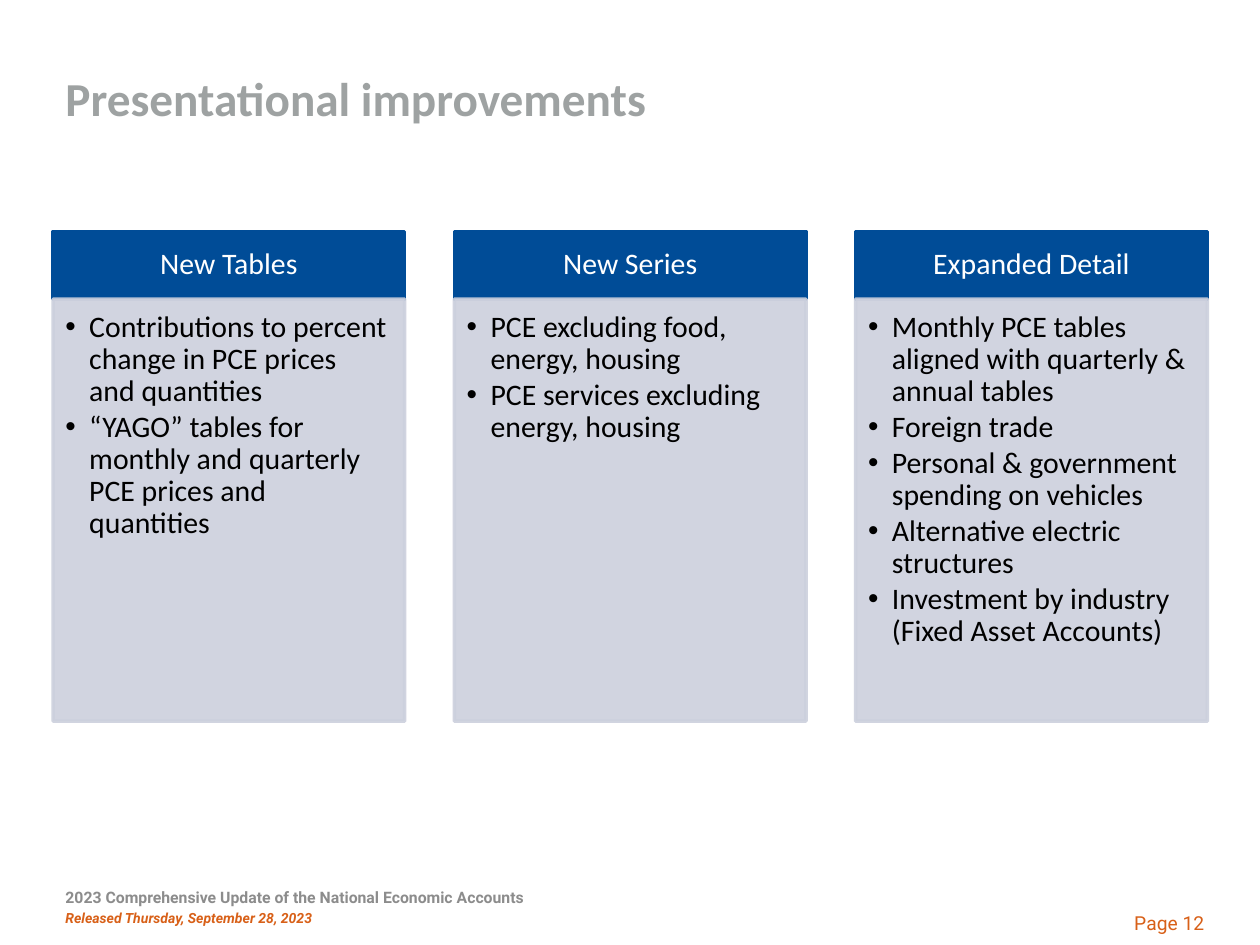
"""Build the slide on presentational improvements in the national accounts."""
from dataclasses import dataclass

from lxml import etree
from pptx import Presentation
from pptx.dml.color import RGBColor
from pptx.enum.shapes import MSO_SHAPE
from pptx.enum.text import MSO_ANCHOR, MSO_AUTO_SIZE, PP_ALIGN
from pptx.oxml.ns import qn
from pptx.util import Cm, Pt

RECTANGLE = MSO_SHAPE.RECTANGLE
TOP, MIDDLE = MSO_ANCHOR.TOP, MSO_ANCHOR.MIDDLE
LEFT, CENTER, RIGHT = PP_ALIGN.LEFT, PP_ALIGN.CENTER, PP_ALIGN.RIGHT
NO_AUTOFIT = MSO_AUTO_SIZE.NONE

BLUE = RGBColor(0x00, 0x4C, 0x97)
PALE = RGBColor(0xCC, 0xD0, 0xDD)
TITLE_GRAY = RGBColor(0x9E, 0xA2, 0xA2)
FOOTER_GRAY = RGBColor(0x8C, 0x8C, 0x8C)
ORANGE = RGBColor(0xD8, 0x60, 0x18)
WHITE = RGBColor(0xFF, 0xFF, 0xFF)
BLACK = RGBColor(0x00, 0x00, 0x00)

MARGIN = Cm(1.07)
COLUMN_WIDTH, COLUMN_PITCH = Cm(7.09), Cm(8.09)
HEADING_TOP, HEADING_HEIGHT = Cm(4.67), Cm(1.36)
PANEL_TOP, PANEL_HEIGHT = Cm(6.03), Cm(8.51)
BULLET_INDENT = Cm(0.48)


@dataclass(frozen=True)
class Style:
    font: str
    size: float
    color: RGBColor
    bold: bool = False
    italic: bool = False


@dataclass(frozen=True)
class Column:
    heading: str
    points: tuple[str, ...]


TITLE_STYLE = Style("Calibri", 27, TITLE_GRAY, bold=True)
HEADING_STYLE = Style("Calibri", 17, WHITE)
POINT_STYLE = Style("Calibri", 17, BLACK)
PAGE_STYLE = Style("Roboto", 11, ORANGE)

COLUMNS = (
    Column("New Tables", (
        "Contributions to percent change in PCE prices and quantities",
        "“YAGO” tables for monthly and quarterly PCE prices and quantities",
    )),
    Column("New Series", (
        "PCE excluding food, energy, housing",
        "PCE services excluding energy, housing",
    )),
    Column("Expanded Detail", (
        "Monthly PCE tables aligned with quarterly & annual tables",
        "Foreign trade",
        "Personal & government spending on vehicles",
        "Alternative electric structures",
        "Investment by industry (Fixed Asset Accounts)",
    )),
)
FOOTER = (
    ("2023 Comprehensive Update of the National Economic Accounts",
     Style("Roboto", 9, FOOTER_GRAY, bold=True)),
    ("Released Thursday, September 28, 2023",
     Style("Roboto", 8, ORANGE, bold=True, italic=True)),
)


def format_runs(paragraph, style: Style, align=LEFT) -> None:
    """Apply a style and an alignment to a paragraph."""
    paragraph.alignment = align
    for run in paragraph.runs:
        run.font.name = style.font
        run.font.size = Pt(style.size)
        run.font.bold = style.bold
        run.font.italic = style.italic
        run.font.color.rgb = style.color


def set_insets(frame, left: float, top: float, right: float, bottom: float) -> None:
    """Set the text margins in centimetres and wrap the text."""
    frame.margin_left, frame.margin_top = Cm(left), Cm(top)
    frame.margin_right, frame.margin_bottom = Cm(right), Cm(bottom)
    frame.word_wrap = True


def add_bullet(paragraph) -> None:
    """Give a paragraph a hanging round bullet."""
    properties = paragraph._p.get_or_add_pPr()
    properties.set("marL", str(BULLET_INDENT))
    properties.set("indent", str(-BULLET_INDENT))
    etree.SubElement(properties, qn("a:buFont"), typeface="Arial")
    etree.SubElement(properties, qn("a:buChar"), char="•")


def add_box(slide, left: int, top: int, height: int, color: RGBColor):
    """Draw a rectangle one column wide with a matching outline."""
    box = slide.shapes.add_shape(RECTANGLE, left, top, COLUMN_WIDTH, height)
    box.shadow.inherit = False
    box.fill.solid()
    box.fill.fore_color.rgb = color
    box.line.color.rgb = color
    box.line.width = Pt(2)
    return box


def make_translucent(box) -> None:
    """Let a box's fill and outline show at 90 percent opacity."""
    for color in box._element.spPr.iter(qn("a:srgbClr")):
        etree.SubElement(color, qn("a:alpha"), val="90000")


def add_column(slide, left: int, column: Column) -> None:
    """Draw a heading bar and the panel of points below it."""
    heading = add_box(slide, left, HEADING_TOP, HEADING_HEIGHT, BLUE).text_frame
    set_insets(heading, 0.33, 0.2, 0.33, 0.2)
    heading.vertical_anchor = MIDDLE
    heading.text = column.heading
    heading.paragraphs[0].line_spacing = 0.9
    format_runs(heading.paragraphs[0], HEADING_STYLE, CENTER)

    panel = add_box(slide, left, PANEL_TOP, PANEL_HEIGHT, PALE)
    make_translucent(panel)
    points = panel.text_frame
    set_insets(points, 0.25, 0.25, 0.33, 0.38)
    points.vertical_anchor = TOP
    points.text = "\n".join(column.points)
    for point in points.paragraphs:
        add_bullet(point)
        point.line_spacing = 0.9
        point.space_after = Pt(2.2)
        format_runs(point, POINT_STYLE)


def add_title(slide) -> None:
    """Place and format the slide title."""
    title = slide.shapes.title
    title.left, title.top, title.width, title.height = MARGIN, Cm(0.64), Cm(19.33), Cm(2.54)
    heading = title.text_frame
    set_insets(heading, 0.25, 0.13, 0.25, 0)
    heading.auto_size = NO_AUTOFIT
    heading.vertical_anchor = MIDDLE
    heading.text = "Presentational improvements"
    format_runs(heading.paragraphs[0], TITLE_STYLE)


def add_footer(slide) -> None:
    """Add the release lines and the page number."""
    release = slide.shapes.add_textbox(MARGIN, Cm(17.78), Cm(18.42), Cm(1.32)).text_frame
    release.word_wrap = True
    release.text = "\n".join(line for line, _ in FOOTER)
    for paragraph, (_, style) in zip(release.paragraphs, FOOTER):
        paragraph.space_after = Pt(1.1)
        format_runs(paragraph, style)

    page = slide.shapes.add_textbox(Cm(21.79), Cm(18.19), Cm(2.74), Cm(0.81)).text_frame
    page.word_wrap = True
    page.vertical_anchor = MIDDLE
    page.text = "Page 12"
    format_runs(page.paragraphs[0], PAGE_STYLE, RIGHT)


def main() -> None:
    """Assemble and save the presentation."""
    presentation = Presentation()
    presentation.slide_width, presentation.slide_height = Cm(25.4), Cm(19.05)
    slide = presentation.slides.add_slide(presentation.slide_layouts[5])
    add_title(slide)
    for position, column in enumerate(COLUMNS):
        add_column(slide, MARGIN + position * COLUMN_PITCH, column)
    add_footer(slide)
    presentation.save("out.pptx")


if __name__ == "__main__":
    main()
